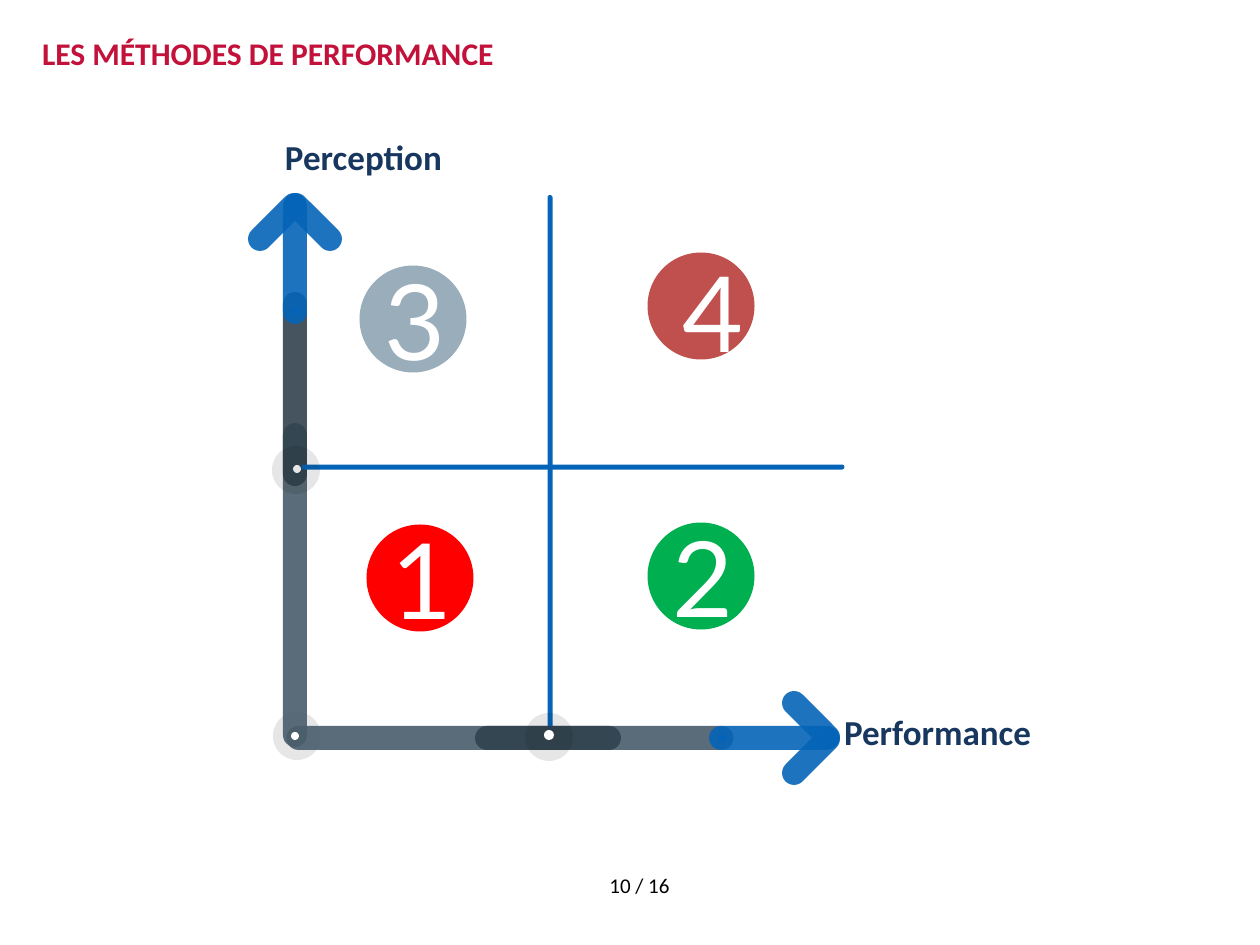
from math import cos, radians, sin

from lxml import etree
from pptx import Presentation
from pptx import util as u
from pptx.dml.color import RGBColor
from pptx.enum import shapes, text
from pptx.oxml.ns import qn

EMU_PER_PX = 914400 / 126
OVAL = shapes.MSO_SHAPE.OVAL
PILL = shapes.MSO_SHAPE.ROUNDED_RECTANGLE

WHITE = RGBColor(0xFF, 0xFF, 0xFF)
BLACK = RGBColor(0x00, 0x00, 0x00)
HALO = RGBColor(0x0D, 0x0D, 0x0D)
SLATE = RGBColor(0x49, 0x5D, 0x6B)
DARK_SLATE = RGBColor(0x32, 0x42, 0x4F)
BLUE = RGBColor(0x05, 0x64, 0xB8)
NAVY = RGBColor(0x17, 0x37, 0x5E)
CRIMSON = RGBColor(0xC2, 0x11, 0x3A)
BRICK = RGBColor(0xC0, 0x50, 0x4D)
GREY_BLUE = RGBColor(0x99, 0xAE, 0xBA)
GREEN = RGBColor(0x00, 0xB0, 0x50)
RED = RGBColor(0xFF, 0x00, 0x00)

BAR = 24        # thickness of the axes
RULE = 5        # thickness of the quadrant lines
AXIS_X, AXIS_Y = 295, 738


def px(value):
    return u.Emu(round(value * EMU_PER_PX))


def set_attributes(target, values):
    for name, value in values.items():
        setattr(target, name, value)


def add_filled(slide, kind, center, size, color, opacity=100, rotation=0):
    """Add a borderless shape placed by its centre."""
    (x, y), (width, height) = center, size
    shape = slide.shapes.add_shape(
        kind, px(x - width / 2), px(y - height / 2), px(width), px(height))
    shape.rotation = rotation
    shape.shadow.inherit = False
    shape.line.fill.background()
    shape.fill.solid()
    shape.fill.fore_color.rgb = color
    if opacity < 100:
        color_element = shape._element.spPr.find(".//" + qn("a:srgbClr"))
        etree.SubElement(color_element, qn("a:alpha"), val=str(opacity * 1000))
    return shape


def add_bar(slide, center, length, color, rotation=0, thickness=BAR, opacity=90):
    bar = add_filled(slide, PILL, center, (length, thickness), color, opacity, rotation)
    bar.adjustments[0] = 0.5


def add_disc(slide, center, diameter, color, opacity=100):
    return add_filled(slide, OVAL, center, (diameter, diameter), color, opacity)


def add_arrow(slide, center, angle):
    """Add a shaft, two head strokes and a tail dot pointing along angle."""
    x, y = center
    forward_x, forward_y = cos(radians(angle)), sin(radians(angle))
    add_bar(slide, center, 130, BLUE, angle)
    for side in (1, -1):
        head = (x + 37 * forward_x - 18 * side * forward_y,
                y + 37 * forward_y + 18 * side * forward_x)
        add_bar(slide, head, 72, BLUE, angle - 45 * side)
    add_disc(slide, (x - 52 * forward_x, y - 52 * forward_y), 8, BLUE, 90)


def write(shape, content, font, paragraph_format=None, frame_format=None):
    frame = shape.text_frame
    set_attributes(frame, {"word_wrap": True, **(frame_format or {})})
    paragraph = frame.paragraphs[0]
    set_attributes(paragraph, paragraph_format or {})
    run = paragraph.add_run()
    run.text = content
    values = dict(font)
    run.font.color.rgb = values.pop("color")
    set_attributes(run.font, values)


def write_label(shape, content, size, color):
    """Write a bold heading at the top left of a box without margins."""
    write(shape, content,
          {"name": "Calibri", "size": u.Pt(size), "bold": True, "color": color},
          {"alignment": text.PP_ALIGN.LEFT, "line_spacing": u.Pt(20),
           "space_before": u.Pt(0), "space_after": u.Pt(12)},
          {"margin_left": 0, "margin_right": 0, "margin_top": 0, "margin_bottom": 0,
           "vertical_anchor": text.MSO_ANCHOR.TOP,
           "auto_size": text.MSO_AUTO_SIZE.NONE})


def add_text_box(slide, left, top, width, height):
    return slide.shapes.add_textbox(px(left), px(top), px(width), px(height))


def add_axes(slide):
    # Horizontal axis
    add_disc(slide, (297, 736), 48, HALO, 10)
    add_bar(slide, (510, AXIS_Y), 447, SLATE)
    add_arrow(slide, (774, AXIS_Y), 0)

    # Vertical axis
    add_bar(slide, (AXIS_X, 585), 324, SLATE, 270)
    add_disc(slide, (AXIS_X, 736), 8, WHITE)
    add_bar(slide, (AXIS_X, 389), 194, DARK_SLATE, 270)
    add_disc(slide, (297, 469), 8, WHITE)
    add_bar(slide, (550, 464), 538, BLUE, 90, RULE, 100)
    add_arrow(slide, (AXIS_X, 259), 270)

    # Midpoints and horizontal divider
    add_bar(slide, (548, AXIS_Y), 146, DARK_SLATE)
    add_disc(slide, (549, 737), 48, HALO, 10)
    add_disc(slide, (549, 735), 10, WHITE)
    add_bar(slide, (573, 467), 543, BLUE, 0, RULE, 100)
    add_disc(slide, (296, 470), 48, HALO, 10)


def add_quadrants(slide):
    digit_font = {"name": "Lato", "size": u.Pt(60), "color": WHITE}
    centered = {"alignment": text.PP_ALIGN.CENTER}
    frame_format = {"vertical_anchor": text.MSO_ANCHOR.MIDDLE,
                    "margin_left": px(9), "margin_right": px(9),
                    "margin_top": px(5), "margin_bottom": px(5)}
    for digit, center, color in (("3", (413, 319), GREY_BLUE),
                                 ("2", (701, 576), GREEN),
                                 ("1", (420, 578), RED)):
        disc = add_disc(slide, center, 107, color)
        write(disc, digit, digit_font, centered, frame_format)

    # The fourth digit sits in its own box, off the disc's centre
    add_disc(slide, (701, 306), 107, BRICK)
    write(add_text_box(slide, 670, 241, 66, 140), "4", digit_font)


def main():
    presentation = Presentation()
    set_attributes(presentation, {"slide_width": px(1260), "slide_height": px(945)})
    slide = presentation.slides.add_slide(presentation.slide_layouts[5])

    # Title
    title = slide.shapes.title
    set_attributes(title, {"left": px(42), "top": px(37),
                           "width": px(1176), "height": px(96)})
    write_label(title, "LES MÉTHODES DE PERFORMANCE", 18, CRIMSON)

    add_axes(slide)
    add_quadrants(slide)

    # Axis names
    for name, left, top in (("Perception", 285, 142), ("Performance", 844, 718)):
        write_label(add_text_box(slide, left, top, 384, 35), name, 20, NAVY)

    # Page number
    write(add_text_box(slide, 552, 866, 175, 39), "10 / 16",
          {"name": "Calibri", "size": u.Pt(12), "color": BLACK},
          {"alignment": text.PP_ALIGN.CENTER})

    presentation.save("out.pptx")


if __name__ == "__main__":
    main()
